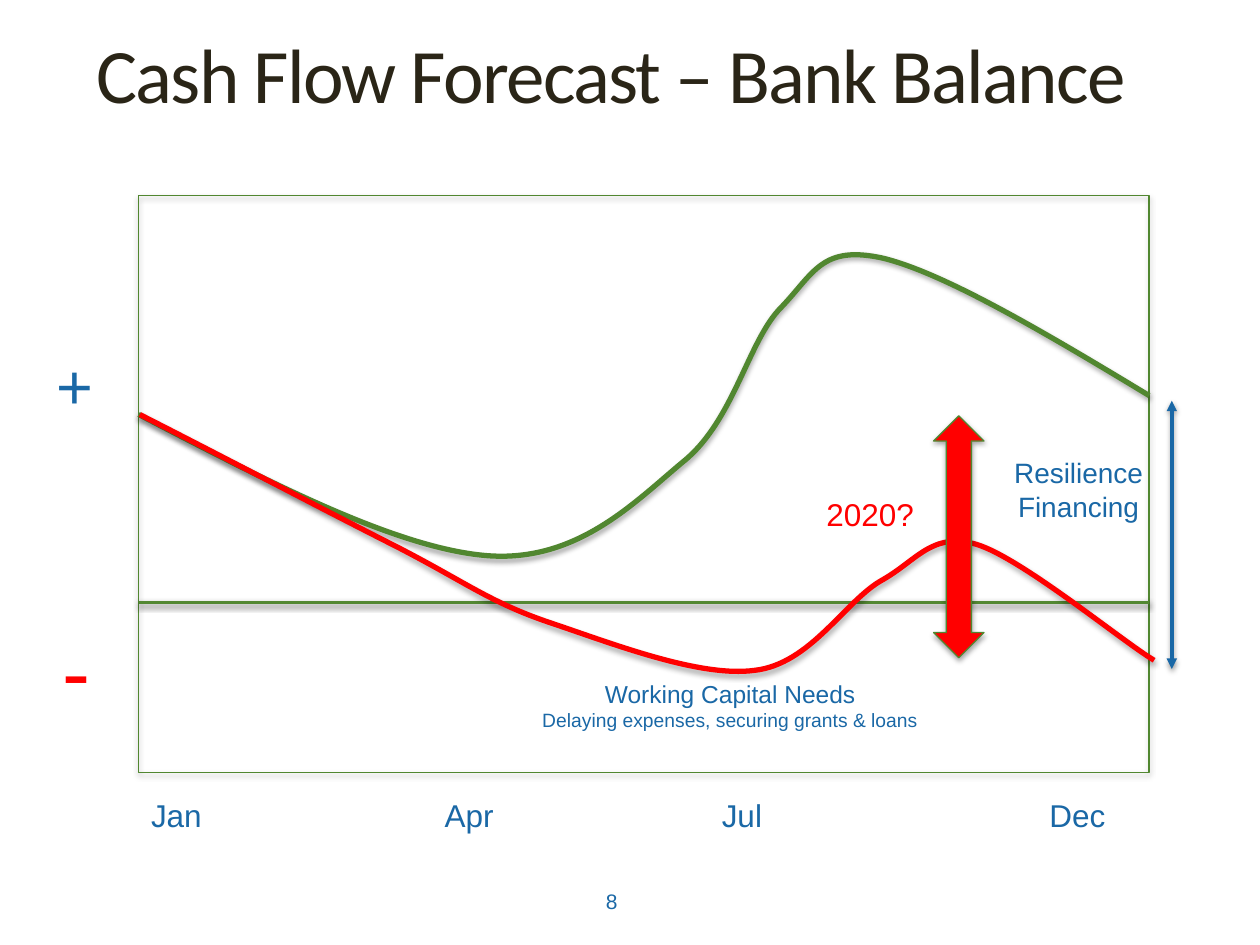
from lxml import etree
from pptx import Presentation
from pptx.dml.color import RGBColor
from pptx.enum import shapes, text
from pptx.oxml import ns
from pptx.util import Inches, Pt

COLORS = {"title": "2A2517", "blue": "1A68A6", "green": "518730",
          "zero": "538833", "red": "FF0000", "shadow": "000000"}


def rgb(name):
    return RGBColor.from_string(COLORS[name])


def child(parent, tag, **attributes):
    return etree.SubElement(parent, ns.qn(tag), attributes)


class Page:
    def __init__(self, slide):
        self.shapes = slide.shapes
        self.font = "Arial"

    def text(self, area, lines, color="blue", align="CENTER", anchor="TOP",
             font=None, spacing=None, tabs=()):
        box = self.shapes.add_textbox(*map(Inches, area))
        frame = box.text_frame
        frame.word_wrap = True
        frame.vertical_anchor = getattr(text.MSO_ANCHOR, anchor)
        for index, (words, size) in enumerate(lines):
            para = frame.add_paragraph() if index else frame.paragraphs[0]
            para.alignment = getattr(text.PP_ALIGN, align)
            if tabs:
                stops = child(para._p.get_or_add_pPr(), "a:tabLst")
                for stop in tabs:
                    child(stops, "a:tab", pos=str(Inches(stop)), algn="l")
            span = para.add_run()
            span.text = words
            for key, value in {"name": font or self.font, "size": Pt(size)}.items():
                setattr(span.font, key, value)
            span.font.color.rgb = rgb(color)
            if spacing:
                span._r.get_or_add_rPr().set("spc", str(spacing))

    def shadow(self, item, opacity, distance):
        properties = item._element.spPr
        effects = child(properties, "a:effectLst")
        outer = child(effects, "a:outerShdw", blurRad=str(Pt(3.1)),
                      dist=str(Pt(distance)), dir="5400000", rotWithShape="0")
        tint = child(outer, "a:srgbClr", val=COLORS["shadow"])
        child(tint, "a:alpha", val=str(opacity * 1000))

    def outline(self, item, color, width):
        item.line.color.rgb = rgb(color)
        item.line.width = Pt(width)

    def shape(self, kind, area, fill=None):
        item = self.shapes.add_shape(kind, *map(Inches, area))
        if fill:
            item.fill.solid()
            item.fill.fore_color.rgb = rgb(fill)
        else:
            item.fill.background()
        self.outline(item, "green", 0.75)
        self.shadow(item, 35, 1.8)

    def line(self, start, end, color, arrows=False):
        item = self.shapes.add_connector(
            shapes.MSO_CONNECTOR.STRAIGHT, *map(Inches, start + end))
        self.outline(item, color, 2)
        if arrows:
            for tag in ("a:headEnd", "a:tailEnd"):
                child(item.line._get_or_add_ln(), tag, type="triangle")
        self.shadow(item, 38, 1.6)

    def curve(self, start, points, color):
        builder = self.shapes.build_freeform(*map(Inches, start))
        builder.add_line_segments(
            [tuple(map(Inches, point)) for point in points], close=False)
        item = builder.convert_to_shape()
        outline_path = item._element.spPr.find(".//" + ns.qn("a:path"))
        steps = outline_path.findall(ns.qn("a:lnTo"))
        for first in range(0, len(steps), 3):
            bezier = child(outline_path, "a:cubicBezTo")
            for step in steps[first:first + 3]:
                bezier.append(step[0])
                outline_path.remove(step)
        item.fill.background()
        self.outline(item, color, 3)
        self.shadow(item, 35, 1.8)


def main():
    deck = Presentation()
    deck.slide_width, deck.slide_height = Inches(10), Inches(7.5)
    page = Page(deck.slides.add_slide(deck.slide_layouts[6]))
    left, right, zero = 1.1, 9.12, 4.78
    width = right - left

    page.text((0.35, 0.15, 9, 0.86), [("Cash Flow Forecast – Bank Balance", 44)],
              "title", anchor="MIDDLE", font="Calibri", spacing=-100)
    page.text((3.69, 6.95, 2.33, 0.4), [("8", 12)], anchor="MIDDLE")
    page.shape(shapes.MSO_SHAPE.RECTANGLE, (left, 1.55, width, 4.58))
    page.text((left, 6.27, width, 0.4), [("Jan\tApr\tJul\tDec", 18)],
              align="LEFT", tabs=(2.33, 4.53, 7.13))
    page.line((left, zero), (right, zero), "zero")
    page.text((0.35, 2.7, 0.52, 0.71), [("+", 36)], align="LEFT")
    page.text((0.35, 4.86, 0.52, 0.91), [("-", 48)], "red")

    page.curve((left, 3.29), [
        (2.12, 3.82), (3.14, 4.35), (3.86, 4.41),
        (4.59, 4.47), (5.05, 3.97), (5.44, 3.65),
        (5.83, 3.32), (5.94, 2.7), (6.2, 2.44),
        (6.46, 2.17), (6.52, 1.94), (7.01, 2.05),
        (7.5, 2.17), (8.31, 2.65), (right, 3.14)], "green")
    page.curve((1.11, 3.29), [
        (1.8, 3.64), (2.48, 4), (3.17, 4.35),
        (3.71, 4.63), (3.89, 4.78), (4.36, 4.94),
        (4.84, 5.1), (5.55, 5.38), (5.99, 5.32),
        (6.43, 5.27), (6.7, 4.78), (6.99, 4.61),
        (7.28, 4.45), (7.39, 4.22), (7.75, 4.32),
        (8.11, 4.43), (8.92, 5.1), (9.16, 5.24)], "red")

    page.text((6.46, 3.88, 1.34, 0.4), [("2020?", 18)], "red", align="LEFT")
    page.shape(shapes.MSO_SHAPE.UP_DOWN_ARROW, (7.41, 3.3, 0.4, 1.92), "red")
    page.text((4.05, 5.34, 3.49, 0.52),
              [("Working Capital Needs", 14),
               ("Delaying expenses, securing grants & loans", 11)])
    page.text((7.8, 3.57, 1.52, 0.64), [("Resilience", 16), ("Financing", 16)])
    page.line((9.3, 3.18), (9.3, 5.31), "blue", arrows=True)
    deck.save("out.pptx")


if __name__ == "__main__":
    main()
